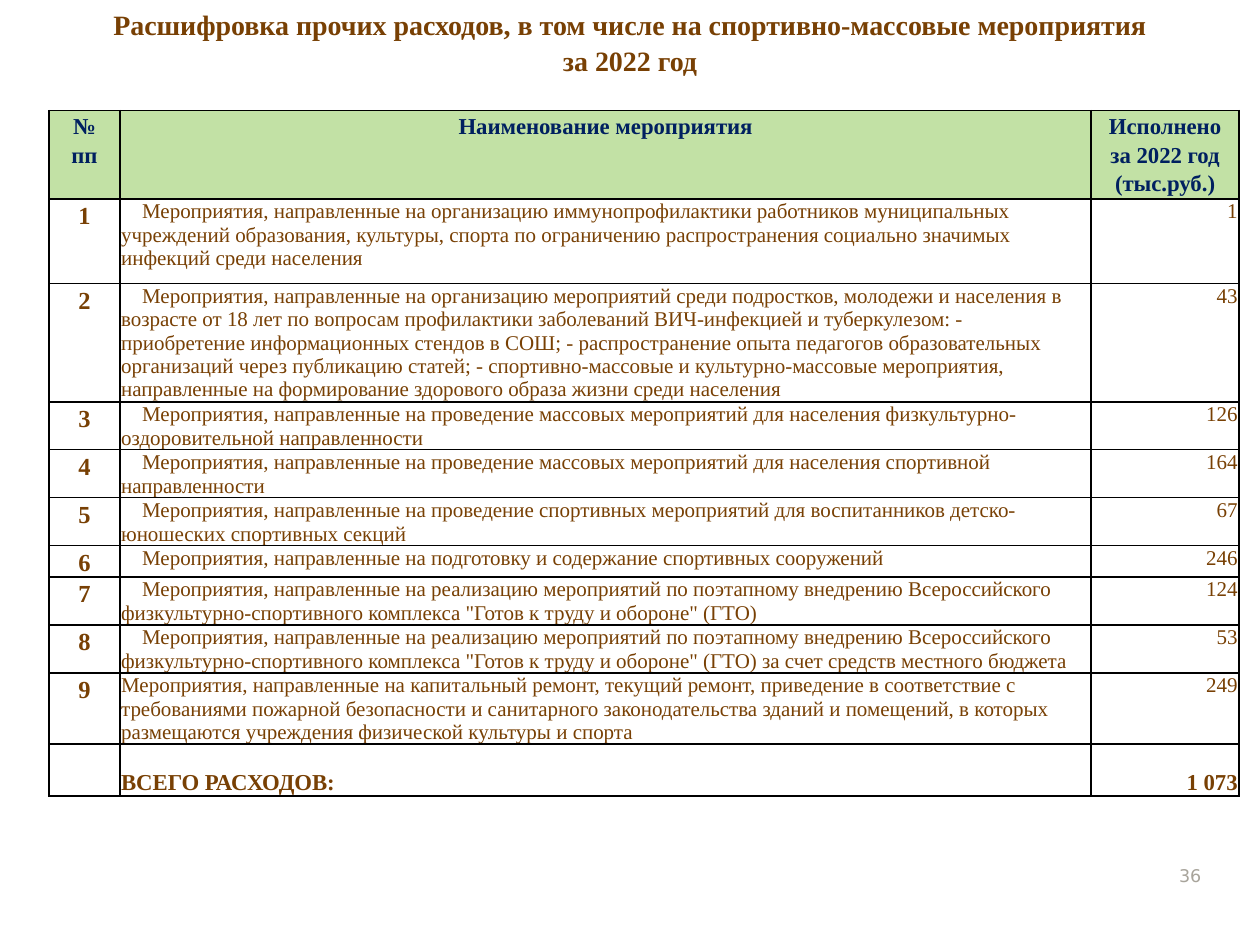
from dataclasses import dataclass

from lxml import etree
from pptx import Presentation
from pptx.dml.color import RGBColor
from pptx.enum.text import MSO_ANCHOR, MSO_AUTO_SIZE, PP_ALIGN
from pptx.oxml.ns import qn
from pptx.util import Pt

LEFT, CENTER, RIGHT = PP_ALIGN.LEFT, PP_ALIGN.CENTER, PP_ALIGN.RIGHT
TOP, BOTTOM = MSO_ANCHOR.TOP, MSO_ANCHOR.BOTTOM


@dataclass(frozen=True)
class Theme:
    font: str = "Times New Roman"
    number_font: str = "DejaVu Sans"
    brown: str = "784004"
    navy: str = "002060"
    green: str = "C2E1A5"
    white: str = "FFFFFF"
    grey: str = "A8A49B"
    border: str = "000000"
    title_size: int = 16
    index_size: int = 14
    header_size: int = 13
    body_size: int = 12
    page_size: int = 10


theme = Theme()


def style_text(frame, size, color, bold=False, align=LEFT, spacing=None, name=theme.font):
    for paragraph in frame.paragraphs:
        paragraph.alignment = align
        if spacing:
            paragraph.line_spacing = spacing
        font = paragraph.font
        font.name, font.size, font.bold = name, Pt(size), bold
        font.color.rgb = RGBColor.from_string(color)


def prepare_cell(cell, fill):
    """Draw the four borders, then fill the cell."""
    properties = cell._tc.get_or_add_tcPr()
    for side in ("lnL", "lnR", "lnT", "lnB"):
        line = etree.SubElement(properties, qn(f"a:{side}"), w=str(Pt(1)))
        solid = etree.SubElement(line, qn("a:solidFill"))
        etree.SubElement(solid, qn("a:srgbClr"), val=theme.border)
    cell.fill.solid()
    cell.fill.fore_color.rgb = RGBColor.from_string(fill)


presentation = Presentation()
presentation.slide_width, presentation.slide_height = Pt(720), Pt(540)
slide = presentation.slides.add_slide(presentation.slide_layouts[5])

# Title
title = slide.shapes.title
title.left, title.top, title.width, title.height = Pt(11.5), Pt(0), Pt(697), Pt(68)
title_frame = title.text_frame
title_frame.text = (
    "Расшифровка прочих расходов, в том числе на спортивно-массовые мероприятия\n"
    "за 2022 год"
)
title_frame.auto_size = MSO_AUTO_SIZE.NONE
title_frame.vertical_anchor = TOP
style_text(title_frame, theme.title_size, theme.brown, True, CENTER, 1.05)

# Expenses table
headers = ["№\nпп", "Наименование мероприятия", "Исполнено за 2022 год (тыс.руб.)"]
events = [
    ("Мероприятия, направленные на организацию иммунопрофилактики работников муниципальных "
     "учреждений образования, культуры, спорта по ограничению распространения социально "
     "значимых инфекций среди населения", "1"),
    ("Мероприятия, направленные на организацию мероприятий среди подростков, молодежи и "
     "населения в возрасте от 18 лет по вопросам профилактики заболеваний ВИЧ-инфекцией и "
     "туберкулезом: - приобретение информационных стендов в СОШ; - распространение опыта "
     "педагогов образовательных организаций через публикацию статей; - спортивно-массовые и "
     "культурно-массовые мероприятия, направленные на формирование здорового образа жизни "
     "среди населения", "43"),
    ("Мероприятия, направленные на проведение массовых мероприятий для населения "
     "физкультурно-оздоровительной направленности", "126"),
    ("Мероприятия, направленные на проведение массовых мероприятий для населения "
     "спортивной направленности", "164"),
    ("Мероприятия, направленные на проведение спортивных мероприятий для воспитанников "
     "детско-юношеских спортивных секций", "67"),
    ("Мероприятия, направленные на подготовку и содержание спортивных сооружений", "246"),
    ("Мероприятия, направленные на реализацию мероприятий по поэтапному внедрению "
     "Всероссийского физкультурно-спортивного комплекса \"Готов к труду и обороне\" (ГТО)",
     "124"),
    ("Мероприятия, направленные на реализацию мероприятий по поэтапному внедрению "
     "Всероссийского физкультурно-спортивного комплекса \"Готов к труду и обороне\" (ГТО) "
     "за счет средств местного бюджета", "53"),
    ("Мероприятия, направленные на капитальный ремонт, текущий ремонт, приведение в "
     "соответствие с требованиями пожарной безопасности и санитарного законодательства "
     "зданий и помещений, в которых размещаются учреждения физической культуры и спорта",
     "249"),
]
rows = [headers]
rows += [(str(number), name, amount) for number, (name, amount) in enumerate(events, 1)]
rows.append(("", "ВСЕГО РАСХОДОВ:", "1 073"))
column_widths = [40.5, 555, 84.5]
row_heights = [50.4, 48.5, 67.5, 27.4, 27.4, 27.4, 17.7, 27.4, 27.4, 40.6, 29.6]
total_row = len(rows) - 1

table = slide.shapes.add_table(
    len(rows), len(headers), Pt(28), Pt(63.2), Pt(sum(column_widths)), Pt(sum(row_heights))
).table
table.first_row = table.horz_banding = False
for column, width in zip(table.columns, column_widths):
    column.width = Pt(width)
for row, height in zip(table.rows, row_heights):
    row.height = Pt(height)

for row_index, values in enumerate(rows):
    is_header, is_total = row_index == 0, row_index == total_row
    for column_index, value in enumerate(values):
        cell = table.cell(row_index, column_index)
        prepare_cell(cell, theme.green if is_header else theme.white)
        wide_margin = is_header or column_index == 0
        cell.margin_left = cell.margin_right = Pt(4.5 if wide_margin else 0.75)
        cell.margin_top, cell.margin_bottom = Pt(0 if wide_margin else 0.75), Pt(0)
        cell.vertical_anchor = BOTTOM if is_total else TOP
        if not value:
            continue
        frame = cell.text_frame
        frame.text = value
        align = RIGHT if column_index == 2 else LEFT
        if is_header:
            style_text(frame, theme.header_size, theme.navy, True, CENTER, 1.15)
        elif is_total:
            style_text(frame, theme.header_size, theme.brown, True, align)
        elif column_index == 0:
            style_text(frame, theme.index_size, theme.brown, True, CENTER, 1.15)
        else:
            style_text(frame, theme.body_size, theme.brown, False, align)
            if column_index == 1 and row_index < len(events):
                frame.paragraphs[0]._p.get_or_add_pPr().set("indent", str(Pt(12)))

# Page number
page_number = slide.shapes.add_textbox(Pt(657.5), Pt(481), Pt(36), Pt(29))
page_frame = page_number.text_frame
page_frame.word_wrap = True
page_frame.vertical_anchor = BOTTOM
page_frame.text = "36"
style_text(page_frame, theme.page_size, theme.grey, align=RIGHT, name=theme.number_font)

presentation.save("out.pptx")
